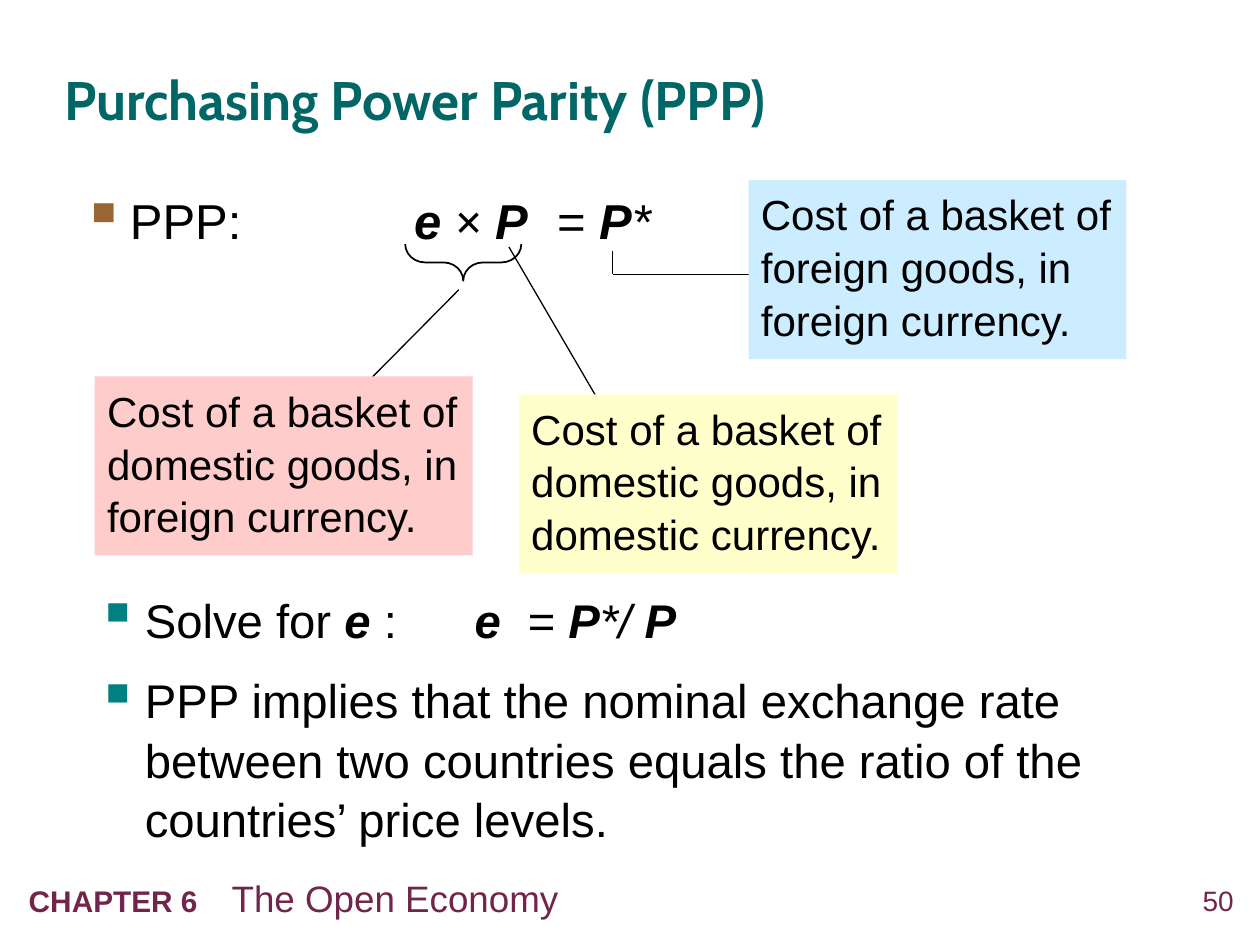
from lxml import etree
from pptx import Presentation
from pptx import util as u
from pptx.dml.color import RGBColor
from pptx.enum import shapes, text
from pptx.oxml.ns import qn

Cm, Pt = u.Cm, u.Pt
COLORS = {
    "title": "006666", "footer": "71254B", "ink": "000000",
    "brown": "996633", "teal": "008080",
    "pink": "FFCCCC", "yellow": "FFFFCC", "blue": "CCECFF",
}
BOX_W, BOX_H = 7.62, 3.61


def rgb(name):
    return RGBColor.from_string(COLORS[name])


def add_text(s, box, inset=True):
    tf = s.shapes.add_textbox(*map(Cm, box)).text_frame
    tf.word_wrap = True
    if not inset:
        tf.margin_left = tf.margin_right = tf.margin_top = tf.margin_bottom = 0
    return tf


def add_run(p, words, size, color="ink", bold=False, italic=False, font="Arial"):
    r = p.add_run()
    r.text = words
    f = r.font
    f.size, f.name, f.bold, f.italic = Pt(size), font, bold, italic
    f.color.rgb = rgb(color)


def set_bullet(p, color, tabs=()):
    pPr = p._p.get_or_add_pPr()
    pPr.set("marL", str(Cm(0.97)))
    pPr.set("indent", str(-Cm(0.97)))
    clr = etree.SubElement(pPr, qn("a:buClr"))
    etree.SubElement(clr, qn("a:srgbClr"), val=COLORS[color])
    etree.SubElement(pPr, qn("a:buSzPct"), val="120000")
    etree.SubElement(pPr, qn("a:buChar"), char="▪")
    set_tabs(p, tabs)


def set_tabs(p, tabs):
    if tabs:
        tab_list = etree.SubElement(p._p.get_or_add_pPr(), qn("a:tabLst"))
        for pos in tabs:
            etree.SubElement(tab_list, qn("a:tab"), pos=str(Cm(pos)), algn="l")


def add_bullet(p, color, runs, size, tabs=()):
    p.line_spacing = 1.05
    p.space_before = Pt(12)
    set_bullet(p, color, tabs)
    for words, style in runs:
        add_run(p, words, size, **style)


def add_line(s, x1, y1, x2, y2):
    c = s.shapes.add_connector(shapes.MSO_CONNECTOR.STRAIGHT, *map(Cm, (x1, y1, x2, y2)))
    c.line.color.rgb = rgb("ink")
    c.line.width = Pt(0.75)
    etree.SubElement(c._element.spPr, qn("a:effectLst"))


def add_callout(s, x, y, color, words, lines):
    for x1, y1, x2, y2 in lines:
        add_line(s, x + x1, y + y1, x + x2, y + y2)
    sp = s.shapes.add_shape(shapes.MSO_SHAPE.RECTANGLE, *map(Cm, (x, y, BOX_W, BOX_H)))
    sp.shadow.inherit = False
    sp.fill.solid()
    sp.fill.fore_color.rgb = rgb(color)
    sp.line.fill.background()
    tf = sp.text_frame
    tf.word_wrap = True
    tf.vertical_anchor = text.MSO_ANCHOR.TOP
    p = tf.paragraphs[0]
    p.alignment = text.PP_ALIGN.LEFT
    p.line_spacing = 1.05
    add_run(p, words, 24)


def add_brace(s, x, y, w, h):
    left, top = x + (w - h) / 2, y + (h - w) / 2
    sp = s.shapes.add_shape(shapes.MSO_SHAPE.LEFT_BRACE, *map(Cm, (left, top, h, w)))
    sp.rotation = 270
    sp.adjustments[0], sp.adjustments[1] = 0.54, 0.5
    sp.shadow.inherit = False
    sp.fill.background()
    sp.line.color.rgb = rgb("ink")
    sp.line.width = Pt(1)


def add_title(s, box):
    tf = add_text(s, box, inset=False)
    tf.vertical_anchor = text.MSO_ANCHOR.MIDDLE
    p = tf.paragraphs[0]
    p.line_spacing = 1.05
    add_run(p, "Purchasing Power Parity (PPP)", 31, "title", bold=True, font="Cabin")


def add_footer(s, x, y):
    p = add_text(s, (x, y, 20.78, 1.14)).paragraphs[0]
    set_tabs(p, [4.09])
    add_run(p, "CHAPTER 6\t", 17, "footer", bold=True)
    add_run(p, "The Open Economy", 21, "footer")
    p = add_text(s, (x + 23.14, y + 0.28, 1.4, 0.81), inset=False).paragraphs[0]
    p.alignment = text.PP_ALIGN.RIGHT
    add_run(p, "50", 16, "footer")


def add_equation(s, box):
    var = {"bold": True, "italic": True}
    runs = [("PPP:\t", {}), ("e ", var), ("× ", {"bold": True, "font": "Times New Roman"}),
            ("P", var), ("\t= ", {}), ("P", var), ("*", {"italic": True})]
    add_bullet(add_text(s, box).paragraphs[0], "brown", runs, 28, [6.7, 9.58])


def add_conclusions(s, box):
    var = {"bold": True, "italic": True}
    tf = add_text(s, box)
    runs = [("Solve for ", {}), ("e ", var), (":\t", {}), ("e", var), ("\t= ", {}),
            ("P", var), ("*/ ", {"italic": True}), ("P", var)]
    add_bullet(tf.paragraphs[0], "teal", runs, 27, [7.62, 8.69])
    add_bullet(tf.add_paragraph(), "teal", [(
        "PPP implies that the nominal exchange rate between two countries "
        "equals the ratio of the countries’ price levels.", {})], 27)


def main():
    prs = Presentation()
    prs.slide_width, prs.slide_height = Cm(25.4), Cm(19.05)
    s = prs.slides.add_slide(prs.slide_layouts[6])
    add_footer(s, 0.33, 17.53)
    add_title(s, (1.3, 0.66, 22.91, 2.62))
    add_equation(s, (1.4, 3.66, 22.4, 1.65))
    add_brace(s, 8.17, 4.92, 2.34, 0.74)
    basket = "Cost of a basket of {} goods, in {} currency."
    add_callout(s, 1.91, 7.59, "pink", basket.format("domestic", "foreign"),
                [(7.34, -1.75, 5.33, 0.28)])
    add_callout(s, 10.46, 7.95, "yellow", basket.format("domestic", "domestic"),
                [(1.9, 0.63, -0.2, -2.97)])
    add_callout(s, 15.09, 3.63, "blue", basket.format("foreign", "foreign"),
                [(0.43, 1.9, -2.74, 1.9), (-2.74, 1.9, -2.74, 1.42)])
    add_conclusions(s, (1.7, 11.73, 21.16, 5.72))
    prs.save("out.pptx")


if __name__ == "__main__":
    main()
